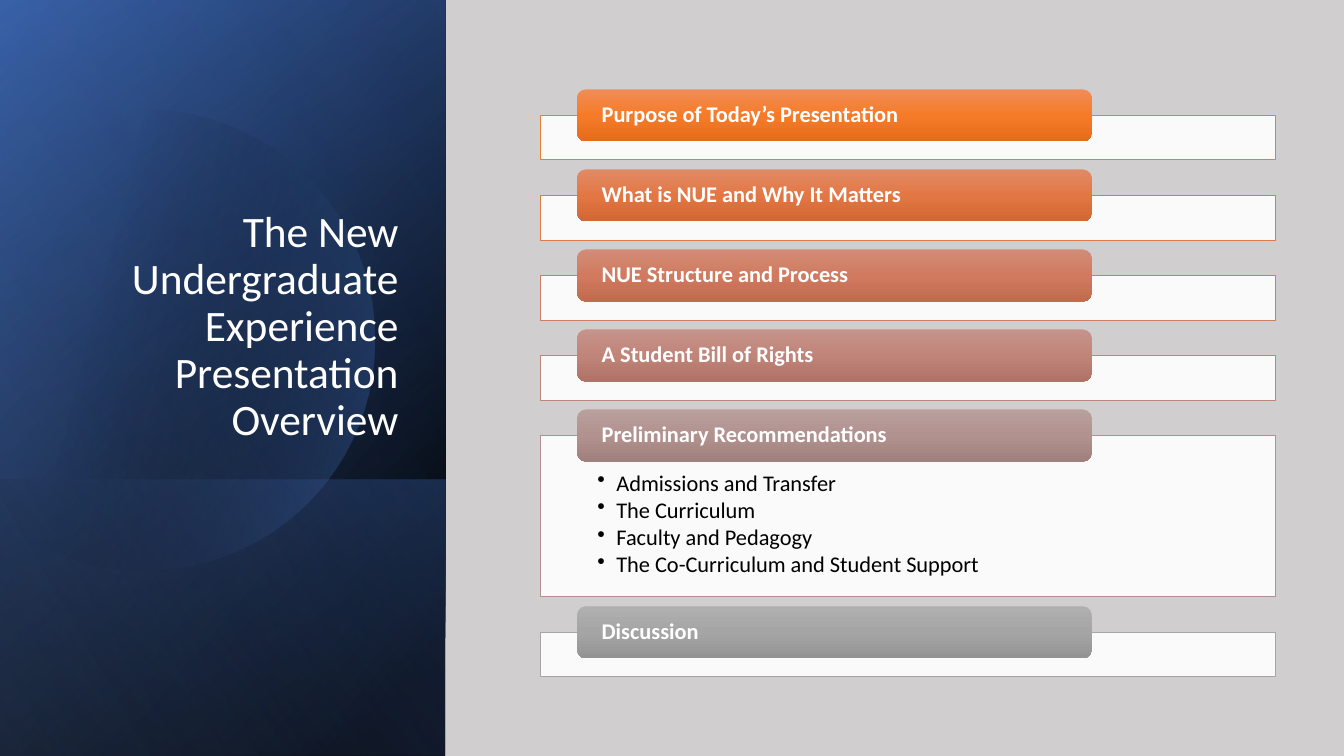
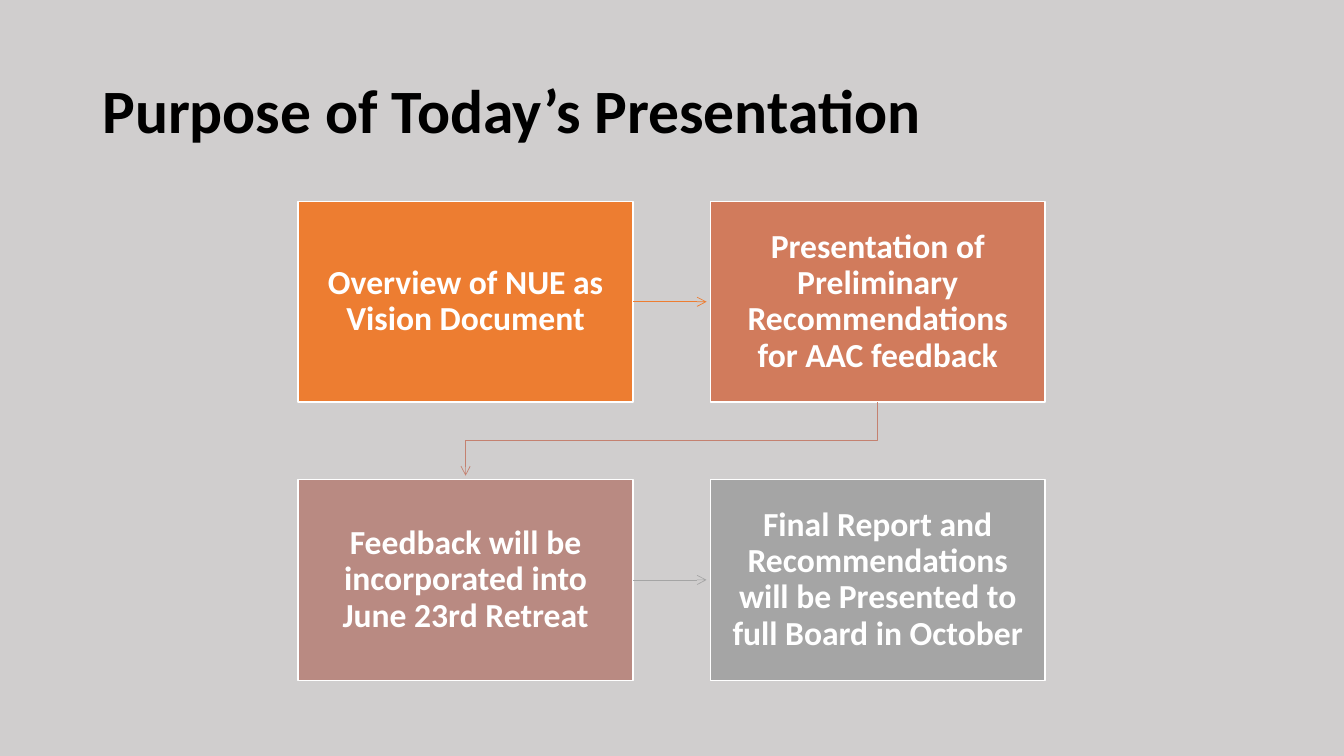
import math
import pptx
import pptx.util
import pptx.dml.color
import pptx.enum.shapes
import pptx.enum.text
import pptx.oxml.ns
from lxml import etree

Pt = pptx.util.Pt
RGB = pptx.dml.color.RGBColor
KIND = pptx.enum.shapes.MSO_SHAPE
ALIGN = pptx.enum.text.PP_ALIGN
ANCHOR = pptx.enum.text.MSO_ANCHOR
qn = pptx.oxml.ns.qn

FONT = "Calibri"
BLACK, WHITE = RGB(0, 0, 0), RGB(0xFF, 0xFF, 0xFF)
GROUND = RGB(0xD0, 0xCE, 0xCE)
NAVY = RGB(0x2F, 0x55, 0x97)
BLUE = RGB(0x44, 0x72, 0xC4)
SKY = RGB(0x8F, 0xAA, 0xDC)
ORANGE = RGB(0xED, 0x7D, 0x31)
CORAL = RGB(0xD1, 0x7B, 0x5C)
CLAY = RGB(0xC4, 0x81, 0x70)
ROSE = RGB(0xB9, 0x8A, 0x82)
GREY = RGB(0xA5, 0xA5, 0xA5)

# Agenda rows: heading, edge colour, tab gradient, bullets
ROWS = [
    ("Purpose of Today’s Presentation", ORANGE,
     (RGB(0xF1, 0x8C, 0x57), RGB(0xF6, 0x7B, 0x28), RGB(0xE5, 0x6C, 0x19)), []),
    ("What is NUE and Why It Matters", RGB(0xDC, 0x7A, 0x4B),
     (RGB(0xE1, 0x8A, 0x66), RGB(0xE3, 0x77, 0x44), RGB(0xD2, 0x67, 0x34)), []),
    ("NUE Structure and Process", RGB(0xCC, 0x7D, 0x64),
     (RGB(0xD2, 0x8C, 0x78), RGB(0xD1, 0x7A, 0x5F), RGB(0xC0, 0x6A, 0x4E)), []),
    ("A Student Bill of Rights", RGB(0xBD, 0x86, 0x7B),
     (RGB(0xC5, 0x94, 0x8B), RGB(0xC1, 0x84, 0x78), RGB(0xAF, 0x72, 0x67)), []),
    ("Preliminary Recommendations", RGB(0xB0, 0x93, 0x91),
     (RGB(0xB9, 0xA0, 0x9D), RGB(0xB2, 0x92, 0x8F), RGB(0xA0, 0x80, 0x7D)),
     ["Admissions and Transfer", "The Curriculum", "Faculty and Pedagogy",
      "The Co-Curriculum and Student Support"]),
    ("Discussion", GREY,
     (RGB(0xAF, 0xAF, 0xAF), GREY, RGB(0x93, 0x93, 0x93)), []),
]

STEPS = [
    ("Overview of NUE as Vision Document", ORANGE),
    ("Presentation of Preliminary Recommendations for AAC feedback", CORAL),
    ("Feedback will be incorporated into June 23rd Retreat", ROSE),
    ("Final Report and Recommendations will be Presented to full Board in October", GREY),
]


# Shared helpers
def tint(node, color, alpha=100):
    """Append a colour with its opacity in percent."""
    clr = etree.SubElement(node, qn("a:srgbClr"), val=str(color))
    if alpha < 100:
        etree.SubElement(clr, qn("a:alpha"), val=str(alpha * 1000))


def blend(shape, stops, angle):
    """Fill with a linear gradient; the angle runs clockwise."""
    shape.fill.gradient()
    shape.fill.gradient_angle = (360 - angle) % 360
    stoplist = shape.element.spPr.find(".//" + qn("a:gsLst"))
    for old in list(stoplist):
        stoplist.remove(old)
    for pos, color, alpha in stops:
        tint(etree.SubElement(stoplist, qn("a:gs"), pos=str(pos * 1000)), color, alpha)


def block(slide, kind, box, edge=None, width=0.5):
    shape = slide.shapes.add_shape(kind, *[Pt(v) for v in box])
    shape.shadow.inherit = False
    if edge is None:
        shape.line.fill.background()
    else:
        shape.line.color.rgb = edge
        shape.line.width = Pt(width)
    return shape


def write(shape, lines, size, color, bold=False, align=ALIGN.LEFT,
          anchor=ANCHOR.MIDDLE, inset=(7.2, 3.6, 7.2, 3.6), after=0, bullet=False):
    frame = shape.text_frame
    frame.word_wrap = True
    frame.vertical_anchor = anchor
    (frame.margin_left, frame.margin_top,
     frame.margin_right, frame.margin_bottom) = [Pt(v) for v in inset]
    for i, line in enumerate(lines):
        para = frame.add_paragraph() if i else frame.paragraphs[0]
        para.alignment = align
        para.line_spacing = 0.9
        para.space_after = Pt(after)
        run = para.add_run()
        run.text = line
        run.font.name = FONT
        run.font.size = Pt(size)
        run.font.bold = bold
        run.font.color.rgb = color
        if bullet:
            props = para._p.get_or_add_pPr()
            props.set("marL", str(Pt(13.5)))
            props.set("indent", str(-Pt(13.5)))
            etree.SubElement(props, qn("a:buChar"), char="•")


def title(slide, box, text, size, color, **style):
    shape = slide.shapes.add_textbox(*[Pt(v) for v in box])
    write(shape, [text], size, color, **style)


def arrow(shape, color):
    shape.line.color.rgb = color
    shape.line.width = Pt(0.5)
    line = shape.element.spPr.find(qn("a:ln"))
    etree.SubElement(line, qn("a:tailEnd"), type="arrow")


def page(deck):
    slide = deck.slides.add_slide(deck.slide_layouts[6])
    slide.background.fill.solid()
    slide.background.fill.fore_color.rgb = GROUND
    return slide


# Regions
def disc(slide, x, y, radius):
    """Circle centred at x, y and cut off at the slide's left edge."""
    limit = int(math.degrees(math.acos(-x / radius)))
    arc = [(Pt(x + radius * math.cos(math.radians(a))),
            Pt(y + radius * math.sin(math.radians(a))))
           for a in range(-limit, limit + 1, 2)]
    path = slide.shapes.build_freeform(*arc[0])
    path.add_line_segments(arc[1:], close=True)
    shape = path.convert_to_shape()
    shape.shadow.inherit = False
    shape.line.fill.background()
    blend(shape, [(29, BLACK, 0), (100, BLUE, 43)], 14)


def panel(slide, box):
    """Dark side panel of stacked gradients."""
    x, y, w, h = box
    low = 197.3

    def layer(area, stops, angle):
        blend(block(slide, KIND.RECTANGLE, area), stops, angle)

    layer(box, [(8, BLACK, 100), (100, NAVY, 100)], 220)
    layer(box, [(0, BLACK, 0), (99, BLUE, 46)], 240)
    layer((x, y + h - low, w, low), [(2, BLUE, 29), (100, BLACK, 30)], 140)
    disc(slide, x + 103, y + 243, 164.7)
    layer(box, [(0, BLACK, 0), (99, SKY, 11)], 150)


def agenda(slide, box):
    """List of boxes, each with a tab over its top edge."""
    x, y, w, _ = box
    tab, gap = 37.2, 25.4
    top = y + tab / 2
    for head, edge, shades, points in ROWS:
        high = 115.2 if points else 31.75
        body = block(slide, KIND.RECTANGLE, (x, top, w, high), edge)
        body.fill.solid()
        body.fill.fore_color.rgb = WHITE
        clr = body.element.spPr.find(qn("a:solidFill"))[0]
        etree.SubElement(clr, qn("a:alpha"), val="90000")
        if points:
            write(body, points, 16, BLACK, anchor=ANCHOR.TOP,
                  inset=(40.8, 26, 40.8, 8.6), after=2.1, bullet=True)
        label = block(slide, KIND.ROUNDED_RECTANGLE,
                      (x + w * 0.05, top - tab / 2, w * 0.7, tab))
        blend(label, [(p, c, 100) for p, c in zip((0, 50, 100), shades)], 90)
        write(label, [head], 16, WHITE, bold=True, inset=(15.7, 0, 15.7, 0))
        top += high + gap


def flow(slide, box):
    """Two by two steps, read row by row, joined with arrows."""
    x, y, w, h = box
    gap, stop = 55.2, 2.7
    wide, high = (w - gap) / 2, (h - gap) / 2
    cards = []
    for i, (text, color) in enumerate(STEPS):
        left, top = x + i % 2 * (wide + gap), y + i // 2 * (high + gap)
        card = block(slide, KIND.RECTANGLE, (left, top, wide, high), WHITE, 1)
        card.fill.solid()
        card.fill.fore_color.rgb = color
        write(card, [text], 24, WHITE, bold=True, align=ALIGN.CENTER, inset=(13.7,) * 4)
        cards.append(card)

    # Arrows along each row
    for row, color in enumerate((ORANGE, GREY)):
        mid = Pt(y + row * (high + gap) + high / 2)
        link = slide.shapes.add_connector(
            pptx.enum.shapes.MSO_CONNECTOR.STRAIGHT,
            Pt(x + wide), mid, Pt(x + wide + gap - stop), mid)
        link.begin_connect(cards[row * 2], 3)
        arrow(link, color)
        etree.SubElement(link.element.spPr, qn("a:effectLst"))

    # Bent arrow down to the second row
    start, end = x + w - wide / 2, x + wide / 2
    base = y + high
    bend = [(start, base), (start, base + gap / 2),
            (end, base + gap / 2), (end, base + gap - stop)]
    bend = [(Pt(a), Pt(b)) for a, b in bend]
    path = slide.shapes.build_freeform(*bend[0])
    path.add_line_segments(bend[1:], close=False)
    shape = path.convert_to_shape()
    shape.fill.background()
    shape.shadow.inherit = False
    arrow(shape, CLAY)


# Slides
def main():
    deck = pptx.Presentation()
    deck.slide_width, deck.slide_height = Pt(960), Pt(540)

    first = page(deck)
    panel(first, (0, 0, 318.2, 540))
    title(first, (46, 132.5, 245.6, 188.6),
          "The New Undergraduate Experience Presentation Overview", 31, WHITE,
          align=ALIGN.RIGHT, anchor=ANCHOR.BOTTOM)
    agenda(first, (386, 63.9, 525, 419.4))

    second = page(deck)
    title(second, (66, 28.8, 828, 104.4), "Purpose of Today’s Presentation",
          44, BLACK, bold=True)
    flow(second, (213, 143.8, 533.6, 342.2))

    deck.save("out.pptx")


if __name__ == "__main__":
    main()
